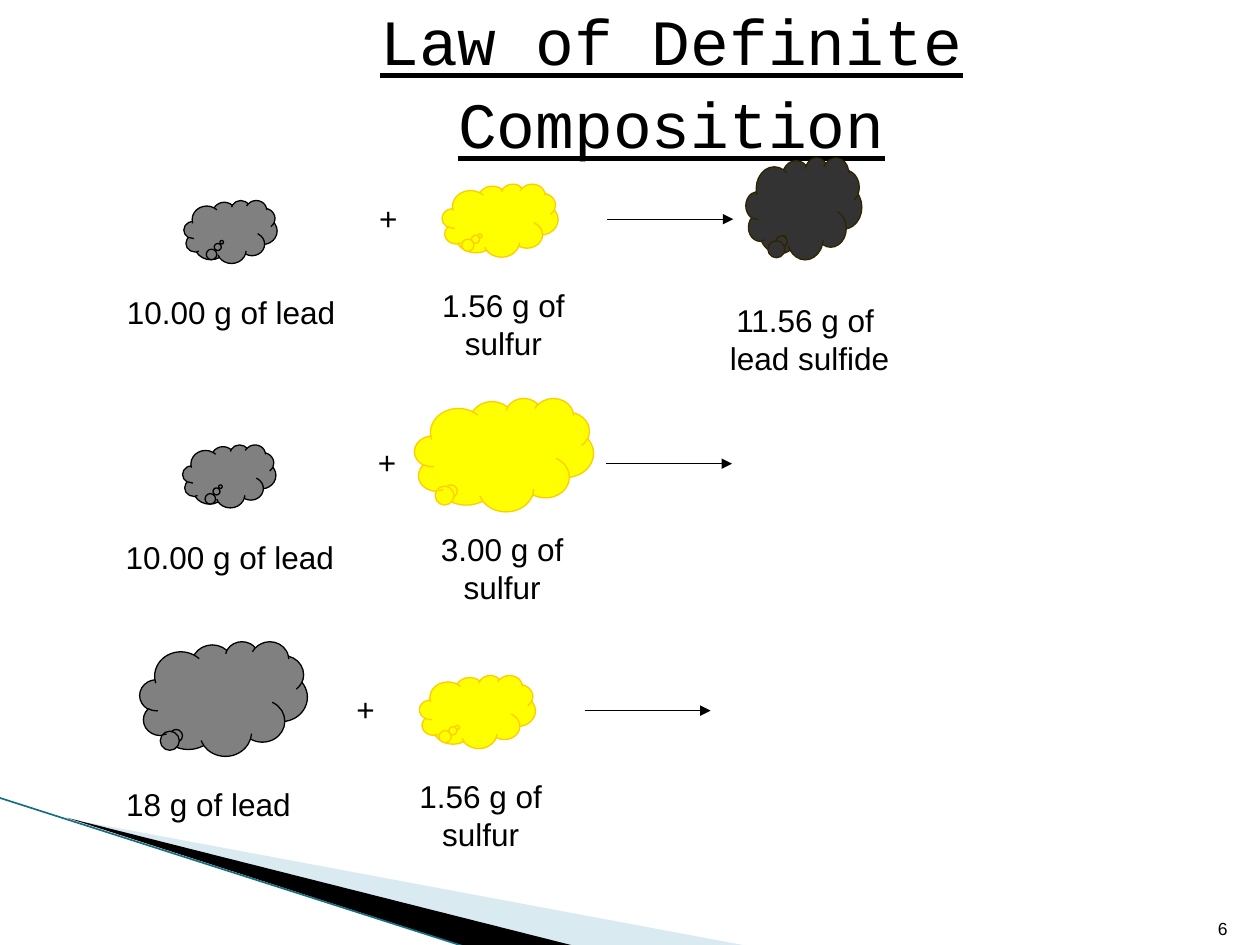
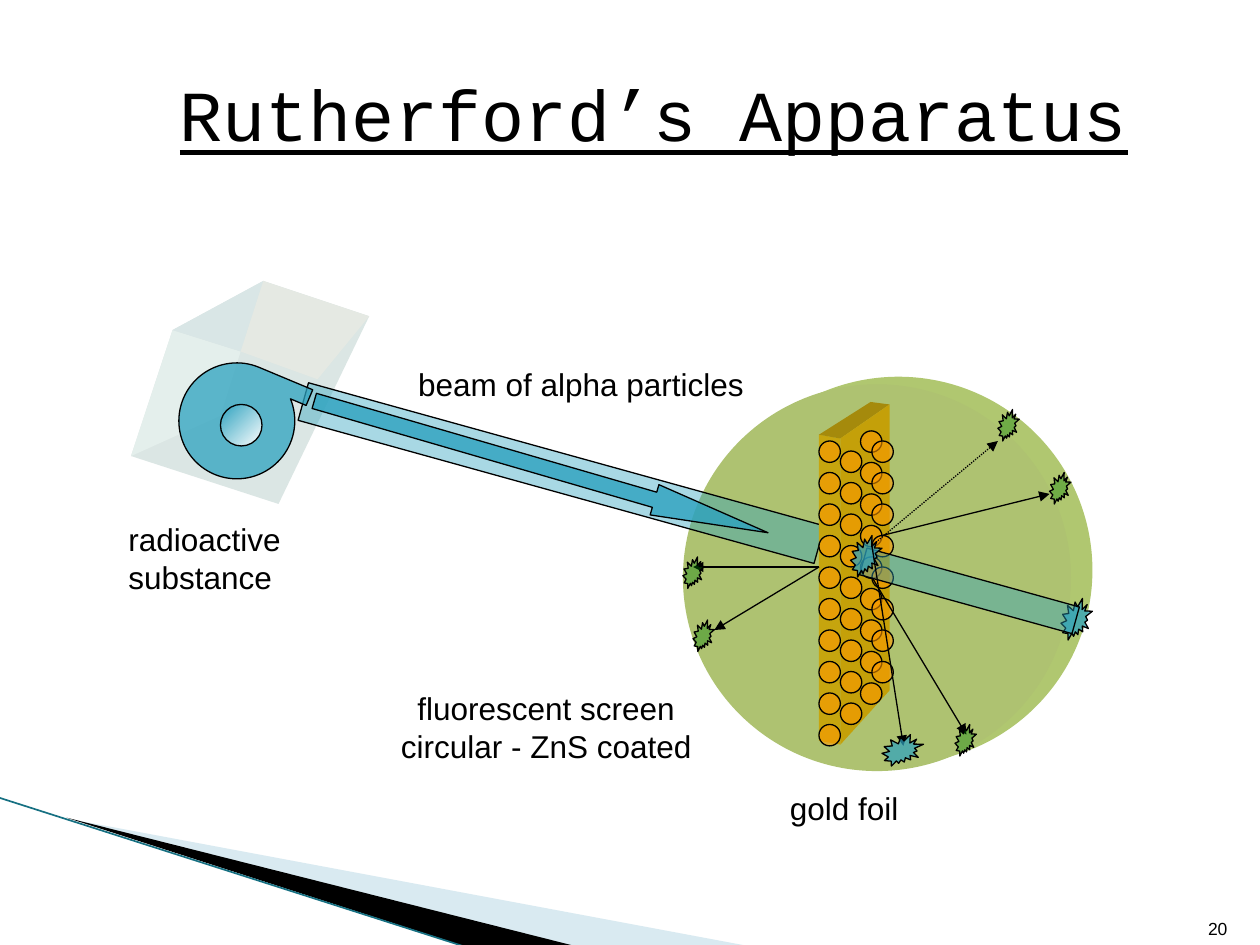
from lxml import etree
from pptx import Presentation
from pptx.dml.color import RGBColor
from pptx.enum.dml import MSO_LINE
from pptx.enum.shapes import MSO_CONNECTOR, MSO_SHAPE
from pptx.enum.text import MSO_ANCHOR, MSO_AUTO_SIZE, PP_ALIGN
from pptx.oxml.ns import qn
from pptx.util import Inches, Pt

LEFT, CENTER, RIGHT = PP_ALIGN.LEFT, PP_ALIGN.CENTER, PP_ALIGN.RIGHT
TOP, MIDDLE, BOTTOM = MSO_ANCHOR.TOP, MSO_ANCHOR.MIDDLE, MSO_ANCHOR.BOTTOM
OVAL, RECTANGLE, RIGHT_ARROW = MSO_SHAPE.OVAL, MSO_SHAPE.RECTANGLE, MSO_SHAPE.RIGHT_ARROW
CLOUD, BURST = MSO_SHAPE.CLOUD_CALLOUT, MSO_SHAPE.EXPLOSION2
TAPE = MSO_SHAPE.FLOWCHART_SEQUENTIAL_ACCESS_STORAGE
DOTTED = MSO_LINE.ROUND_DOT

BLACK = RGBColor(0x00, 0x00, 0x00)
WHITE = RGBColor(0xFF, 0xFF, 0xFF)
PALE_BLUE = RGBColor(0xA0, 0xCB, 0xDC)
DARK_TEAL = RGBColor(0x16, 0x70, 0x82)
TEAL = RGBColor(0x2D, 0xA2, 0xBF)
GRAY = RGBColor(0x80, 0x80, 0x80)
CHARCOAL = RGBColor(0x33, 0x33, 0x33)
DARK_BROWN = RGBColor(0x2E, 0x25, 0x00)
YELLOW = RGBColor(0xFF, 0xFF, 0x00)
AMBER = RGBColor(0xFF, 0xCC, 0x00)
ORANGE = RGBColor(0xFF, 0x99, 0x00)
GREEN = RGBColor(0x00, 0x80, 0x00)
SCREEN_GREEN = RGBColor(0xAE, 0xC2, 0x71)
SCREEN_RIM = RGBColor(0xB0, 0xC7, 0x70)
BOX_BASE = RGBColor(0xDB, 0xE6, 0xE4)
BOX_LEFT = RGBColor(0xE4, 0xEF, 0xEC)
BOX_TOP = RGBColor(0xD9, 0xE6, 0xE6)
BOX_BACK = RGBColor(0xE5, 0xE9, 0xE3)
FOIL_FRONT = RGBColor(0xC6, 0xA5, 0x0E)
FOIL_TOP = RGBColor(0xA5, 0x8A, 0x0C)
FOIL_SIDE = RGBColor(0xC4, 0xA0, 0x09)

TITLE_FONT, BODY_FONT = "Courier New", "Arial"

# Corner bands: points, colour, opacity
BANDS = [
    ([(0.55, 6.5), (5.95, 7.51), (4.56, 7.51)], PALE_BLUE, 40),
    ([(0.53, 6.49), (4.57, 7.51), (3.72, 7.52)], BLACK, 100),
]

# Reactions: left of the plus sign, height of the arrow, then the substances as
# (text, label left, drop of the label, cloud box, cloud tail, fill, line)
REACTIONS = [
    (2.91, 1.74, [
        ("10.00 g of lead", (0.91, 1.85), 0.54, (1.46, 1.59, 0.74, 0.5),
         (-0.094, 0.166), GRAY, BLACK),
        ("1.56 g of\nsulfur", (3.41, 1.17), 0.48, (3.51, 1.46, 0.92, 0.58),
         (-0.174, 0.211), YELLOW, AMBER),
        ("11.56 g of \nlead sulfide", (5.69, 1.47), 0.6, (5.92, 1.25, 0.92, 0.81),
         (-0.174, 0.293), CHARCOAL, DARK_BROWN),
    ]),
    (2.9, 3.68, [
        ("10.00 g of lead", (0.9, 1.85), 0.54, (1.45, 3.53, 0.74, 0.5),
         (-0.094, 0.166), GRAY, BLACK),
        ("3.00 g of\nsulfur", (3.4, 1.17), 0.48, (3.29, 3.16, 1.42, 0.9),
         (-0.289, 0.313), YELLOW, AMBER),
    ]),
    (2.73, 5.64, [
        ("18 g of lead", (0.9, 1.51), 0.54, (1.11, 5.09, 1.33, 0.91),
         (-0.275, 0.315), GRAY, BLACK),
        ("1.56 g of\nsulfur", (3.23, 1.17), 0.48, (3.33, 5.36, 0.92, 0.58),
         (-0.174, 0.211), YELLOW, AMBER),
    ]),
]

BOX_FACES = [
    ([(1.04, 3.62), (1.37, 2.62), (2.09, 2.23), (2.93, 2.51), (2.21, 4)], BOX_BASE),
    ([(1.04, 3.62), (1.37, 2.62), (1.91, 2.79), (1.75, 3.3)], BOX_LEFT),
    ([(1.37, 2.62), (2.09, 2.23), (1.91, 2.79)], BOX_TOP),
    ([(1.91, 2.79), (2.09, 2.23), (2.93, 2.51), (2.52, 3.01)], BOX_BACK),
]
FOIL_FACES = [
    ([(6.5, 3.45), (6.67, 3.48), (6.67, 5.91), (6.5, 5.88)], FOIL_FRONT),
    ([(6.5, 3.45), (6.91, 3.19), (7.06, 3.21), (6.67, 3.48)], FOIL_TOP),
    ([(6.67, 3.48), (7.06, 3.21), (7.06, 5.48), (6.67, 5.91)], FOIL_SIDE),
]

# Gold atoms: left, first top, count
ATOM_COLUMNS = [(6.5, 3.5, 10), (6.83, 3.42, 9), (6.67, 3.58, 9), (6.92, 3.5, 8)]
ATOM_SIZE, ATOM_STEP = 0.17, 0.25

# Scattered particles: start, end, top left of the flash
SCATTERED = [
    ((6.92, 4.33), (7.92, 3.5), (7.92, 3.25)),
    ((7, 4.25), (8.33, 3.92), (8.33, 3.75)),
    ((6.92, 4.58), (7.67, 5.83), (7.58, 5.75)),
    ((6.5, 4.5), (5.5, 4.5), (5.42, 4.42)),
    ((6.5, 4.5), (5.67, 5), (5.5, 4.92)),
]

APPARATUS_LABELS = [
    ("beam of alpha particles", (3.22, 2.85, 2.78, 0.4), LEFT),
    ("radioactive\nsubstance", (0.92, 4.08, 1.48, 0.7), LEFT),
    ("fluorescent screen\ncircular - ZnS coated", (3.08, 5.42, 2.51, 0.7), CENTER),
    ("gold foil", (6.17, 6.21, 1.06, 0.4), LEFT),
]


def inches(values):
    return [Inches(value) for value in values]


def write(shape, text, size=18, font=BODY_FONT, align=LEFT, anchor=TOP,
          wrap=False, underline=None, spacing=None):
    """Fill a shape with text, one paragraph per line."""
    frame = shape.text_frame
    frame.word_wrap = wrap
    frame.auto_size = MSO_AUTO_SIZE.NONE
    frame.vertical_anchor = anchor
    frame.text = text
    for paragraph in frame.paragraphs:
        paragraph.alignment = align
        paragraph.line_spacing = spacing
        for run in paragraph.runs:
            run.font.name = font
            run.font.size = Pt(size)
            run.font.underline = underline
            run.font.color.rgb = BLACK


def add_text(slide, text, box, **style):
    write(slide.shapes.add_textbox(*inches(box)), text, **style)


def paint(shape, fill, opacity=100, line=None):
    shape.shadow.inherit = False
    shape.fill.solid()
    shape.fill.fore_color.rgb = fill
    if opacity < 100:
        color = shape.element.spPr.find(qn("a:solidFill"))[0]
        etree.SubElement(color, qn("a:alpha")).set("val", str(opacity * 1000))
    if line is None:
        shape.line.fill.background()
    else:
        shape.line.color.rgb = line
        shape.line.width = Pt(0.75)


def add_shape(slide, kind, box, fill, opacity=100, line=BLACK, rotation=0, adjust=()):
    shape = slide.shapes.add_shape(kind, *inches(box))
    shape.rotation = rotation
    for index, value in enumerate(adjust):
        shape.adjustments[index] = value
    paint(shape, fill, opacity, line)
    return shape


def add_polygon(slide, points, fill, opacity=100):
    start, *others = [inches(point) for point in points]
    builder = slide.shapes.build_freeform(*start)
    builder.add_line_segments(others)
    shape = builder.convert_to_shape()
    paint(shape, fill, opacity)
    return shape


def add_line(slide, start, end, color=BLACK, width=0.75, dash=None, arrow=True):
    line = slide.shapes.add_connector(MSO_CONNECTOR.STRAIGHT, *inches(start + end))
    line.line.color.rgb = color
    line.line.width = Pt(width)
    if dash is not None:
        line.line.dash_style = dash
    if arrow:
        etree.SubElement(line.line._get_or_add_ln(), qn("a:tailEnd")).set("type", "triangle")
    etree.SubElement(line.element.spPr, qn("a:effectLst"))
    return line


def move_bands_to_layout(slide):
    """Draw the corner bands once and hand them to the shared layout."""
    bands = [add_polygon(slide, *band) for band in BANDS]
    bands.append(add_line(slide, (-0.01, 6.33), (3.71, 7.52), DARK_TEAL, 0.95, arrow=False))
    for band in bands:
        slide.slide_layout.shapes.element.append(band.element)


def add_slide(presentation, title, box, size, number):
    slide = presentation.slides.add_slide(presentation.slide_layouts[5])
    heading = slide.shapes.title
    heading.left, heading.top, heading.width, heading.height = inches(box)
    write(heading, title, size=size, font=TITLE_FONT, align=CENTER, anchor=MIDDLE,
          wrap=True, underline=True, spacing=1.07)
    add_text(slide, number, (8.92, 7.01, 0.92, 0.49), size=10, align=RIGHT,
             anchor=BOTTOM, wrap=True)
    return slide


def draw_reactions(slide):
    for plus_left, arrow_y, substances in REACTIONS:
        arrow_left = plus_left + 1.91
        add_line(slide, (arrow_left, arrow_y), (arrow_left + 1, arrow_y))
        add_text(slide, "+", (plus_left, arrow_y - 0.21, 0.35, 0.4))
        for text, (left, width), drop, cloud, tail, fill, line in substances:
            height = 0.7 if "\n" in text else 0.4
            add_text(slide, text, (left, arrow_y + drop, width, height), align=CENTER)
            add_shape(slide, CLOUD, cloud, fill, line=line, adjust=tail)


def draw_source(slide):
    for points, fill in BOX_FACES:
        add_polygon(slide, points, fill)
    add_shape(slide, RECTANGLE, (2.33, 3.6, 4.25, 0.31), TEAL, 41, rotation=15.5)
    tape = add_shape(slide, TAPE, (1.42, 2.88, 0.92, 0.92), TEAL, 75, rotation=202.7)
    tape.element.spPr.find(qn("a:xfrm")).set("flipH", "1")
    sample = add_shape(slide, OVAL, (1.75, 3.21, 0.33, 0.33), TEAL)
    sample.fill.gradient()
    sample.fill.gradient_angle = 315
    for stop, color in zip(sample.fill.gradient_stops, (TEAL, WHITE)):
        stop.color.rgb = color


def draw_foil(slide):
    for points, fill in FOIL_FACES:
        add_polygon(slide, points, fill)
    add_shape(slide, RIGHT_ARROW, (2.42, 3.58, 3.75, 0.25), TEAL, 80,
              rotation=16.2, adjust=(0.5, 3.75))
    for left, first_top, count in ATOM_COLUMNS:
        for row in range(count):
            top = first_top + row * ATOM_STEP
            add_shape(slide, OVAL, (left, top, ATOM_SIZE, ATOM_SIZE), ORANGE, 57)


def draw_scattering(slide):
    for index, (start, end, flash) in enumerate(SCATTERED):
        add_line(slide, start, end, dash=DOTTED if index == 0 else None)
        add_shape(slide, BURST, flash + (0.17, 0.25), GREEN, 37)
    add_shape(slide, BURST, (8.42, 4.75, 0.25, 0.33), TEAL, 74)
    add_shape(slide, RECTANGLE, (6.82, 4.58, 1.75, 0.22), TEAL, 41, rotation=15.5)
    add_shape(slide, BURST, (6.75, 4.25, 0.25, 0.33), TEAL, 74)
    add_line(slide, (6.92, 4.33), (7.17, 5.92))
    add_shape(slide, BURST, (7, 5.83, 0.33, 0.25), TEAL, 71)


def draw_apparatus(slide):
    add_shape(slide, OVAL, (5.59, 2.99, 3.08, 3.07), SCREEN_RIM, line=None)
    add_shape(slide, OVAL, (5.42, 3.05, 3.08, 3.07), SCREEN_GREEN, line=None)
    draw_source(slide)
    draw_foil(slide)
    for text, box, align in APPARATUS_LABELS:
        add_text(slide, text, box, align=align)
    draw_scattering(slide)


def main():
    presentation = Presentation()
    presentation.slide_width, presentation.slide_height = Inches(10), Inches(7.5)
    composition = add_slide(presentation, "Law of Definite Composition",
                            (1.42, 0, 7.82, 1.25), 36.9, "6")
    move_bands_to_layout(composition)
    draw_reactions(composition)
    apparatus = add_slide(presentation, "Rutherford’s Apparatus",
                          (1.28, 0.25, 7.82, 1.25), 41, "20")
    draw_apparatus(apparatus)
    presentation.save("out.pptx")


if __name__ == "__main__":
    main()
